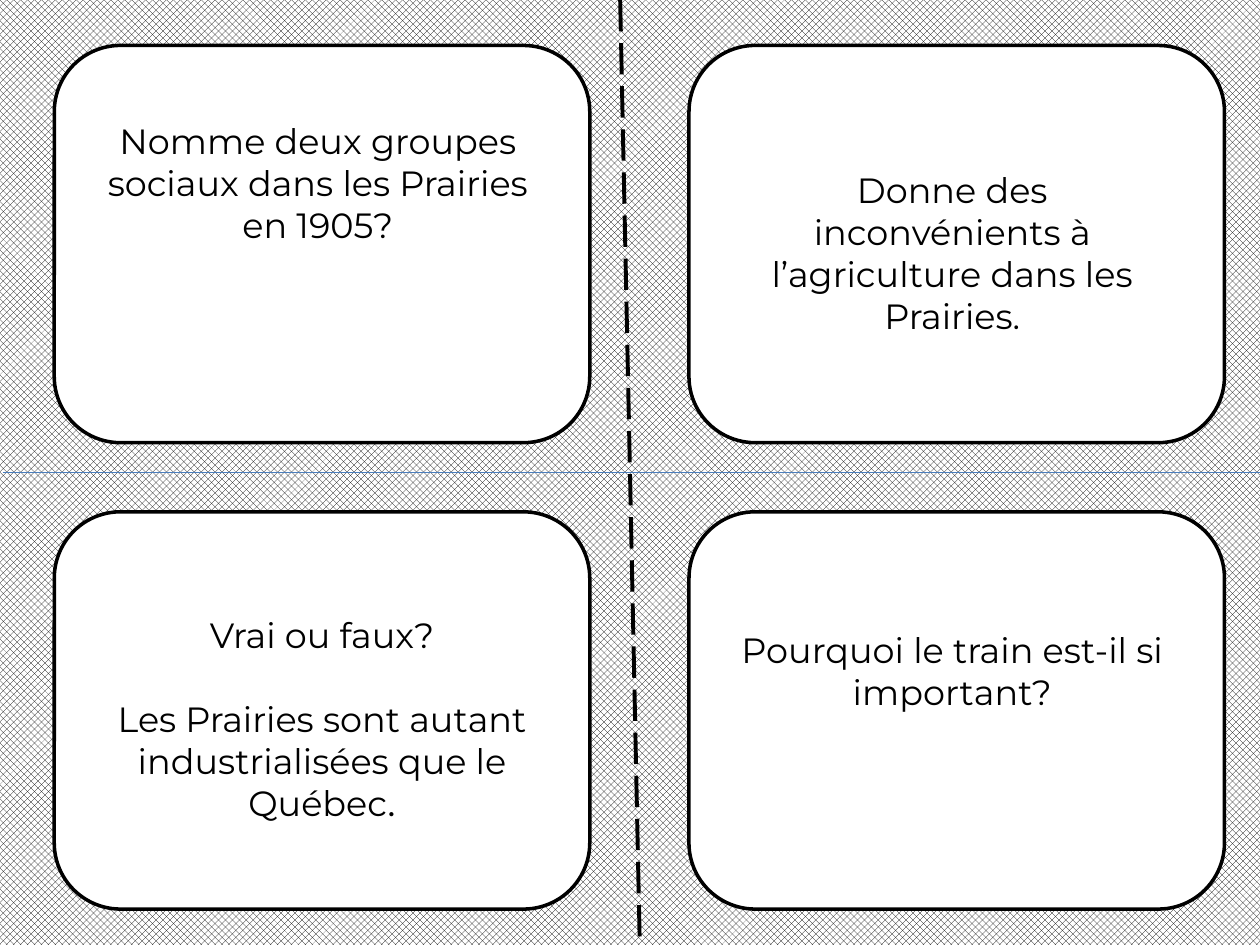
from lxml import etree
from pptx import Presentation
from pptx.dml.color import RGBColor
from pptx.enum.dml import MSO_LINE, MSO_PATTERN
from pptx.enum.shapes import MSO_CONNECTOR, MSO_SHAPE
from pptx.enum.text import MSO_AUTO_SIZE, PP_ALIGN
from pptx.oxml.ns import qn
from pptx.util import Pt

STRAIGHT = MSO_CONNECTOR.STRAIGHT
ROUNDED = MSO_SHAPE.ROUNDED_RECTANGLE
LONG_DASH = MSO_LINE.LONG_DASH
DIAMONDS = MSO_PATTERN.SOLID_DIAMOND
GROW = MSO_AUTO_SIZE.SHAPE_TO_FIT_TEXT
CENTER = PP_ALIGN.CENTER

BLACK = RGBColor(0x00, 0x00, 0x00)
WHITE = RGBColor(0xFF, 0xFF, 0xFF)
BLUE = RGBColor(0x4B, 0x7E, 0xBC)


def add_text(paragraph, text, font="Montserrat", size=20, color=BLACK, gap=0):
    """Append a centred run; gap is the space after its paragraph."""
    paragraph.alignment = CENTER
    paragraph.space_after = Pt(gap)
    run = paragraph.add_run()
    run.text = text
    run.font.name = font
    run.font.size = Pt(size)
    run.font.color.rgb = color


prs = Presentation()
prs.slide_width, prs.slide_height = Pt(720), Pt(540)
slide = prs.slides.add_slide(prs.slide_layouts[6])

backdrop = slide.background.fill
backdrop.patterned()
backdrop.pattern = DIAMONDS
backdrop.fore_color.rgb = BLACK
backdrop.back_color.rgb = WHITE

# Cutting lines: start, end, colour, width, dash
cuts = [
    ((354.4, 0), (365.6, 540), BLACK, 2.25, LONG_DASH),
    ((1.5, 270), (736, 270), BLUE, 0.75, None),
]
for start, end, color, width, dash in cuts:
    cut = slide.shapes.add_connector(STRAIGHT, *map(Pt, start + end))
    cut.line.color.rgb = color
    cut.line.width = Pt(width)
    cut.line.dash_style = dash
    etree.SubElement(cut._element.spPr, qn("a:effectLst"))

# Four cards in a two by two grid
for top in (26, 292.5):
    for left in (31, 393.7):
        card = slide.shapes.add_shape(ROUNDED, Pt(left), Pt(top), Pt(306), Pt(227))
        card.shadow.inherit = False
        card.fill.solid()
        card.fill.fore_color.rgb = WHITE
        card.line.color.rgb = BLACK
        card.line.width = Pt(2)

# Questions: left, top, width, height, paragraphs as lists of (text, format)
questions = [
    (48.5, 64.8, 266.4, 80, [
        [("Nomme deux groupes sociaux dans les Prairies en 1905?", {})],
    ]),
    (39.4, 347, 289.4, 128, [
        [("Vrai ou faux?", {"gap": 24})],
        [("Les Prairies sont autant industrialisées que le Québec", {}),
         (".", {"font": "Calibri"})],
    ]),
    (411, 92.8, 266.4, 104.4, [
        [("Donne des inconvénients à l’agriculture dans les Prairies.", {})],
    ]),
    (411, 355.7, 266.4, 55.4, [
        [("Pourquoi le train est-il si important?", {})],
    ]),
]
for *box, paragraphs in questions:
    frame = slide.shapes.add_textbox(*map(Pt, box)).text_frame
    frame.word_wrap = True
    frame.auto_size = GROW
    for index, runs in enumerate(paragraphs):
        paragraph = frame.add_paragraph() if index else frame.paragraphs[0]
        for text, style in runs:
            add_text(paragraph, text, **style)

prs.save("out.pptx")
